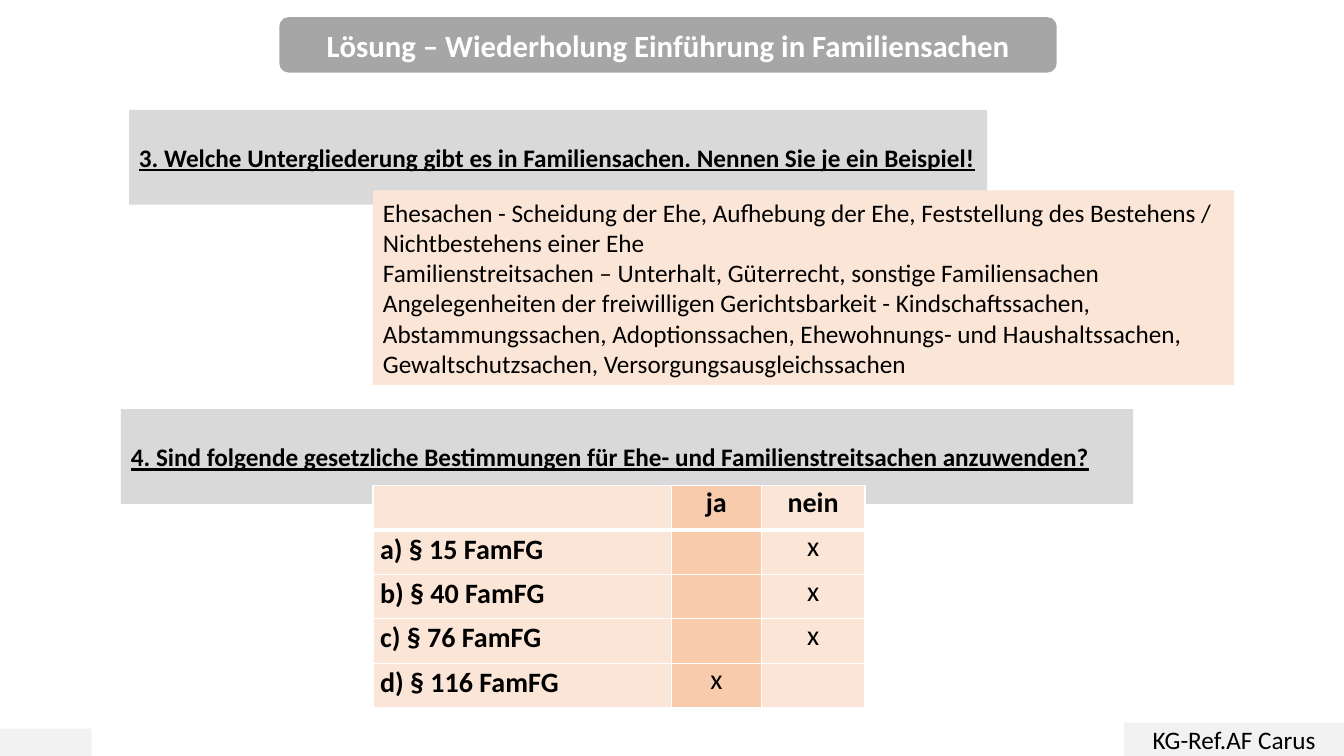
from lxml import etree
from pptx import Presentation, util as u
from pptx.dml.color import RGBColor
from pptx.enum import shapes as sh, text as tx
from pptx.oxml import ns


def color(hex_value):
    return RGBColor.from_string(hex_value)


def write(frame, lines, align, ink="000000", spacing=None, **font_format):
    for index, line in enumerate(lines):
        paragraph = frame.paragraphs[0] if index == 0 else frame.add_paragraph()
        paragraph.alignment = align
        paragraph.line_spacing = spacing
        run = paragraph.add_run()
        run.text = line
        run.font.name = "Calibri"
        run.font.color.rgb = color(ink)
        for attribute, value in font_format.items():
            setattr(run.font, attribute, value)


LEFT, CENTER = tx.PP_ALIGN.LEFT, tx.PP_ALIGN.CENTER
RECT, ROUNDED = sh.MSO_SHAPE.RECTANGLE, sh.MSO_SHAPE.ROUNDED_RECTANGLE
PEACH, DARK_PEACH, GREY, PALE_GREY = "FBE5D6", "F8CBAD", "D9D9D9", "F2F2F2"

title = {"size": u.Pt(22), "bold": True, "ink": "FFFFFF"}
body = {"size": u.Pt(18)}
question = {"size": u.Pt(18), "bold": True, "underline": True}

deck = Presentation()
deck.slide_width, deck.slide_height = u.Inches(13.33), u.Inches(7.5)
slide = deck.slides.add_slide(deck.slide_layouts[6])

panels = [
    (ROUNDED, (2.77, 0.17, 7.71, 0.55), "A6A6A6", CENTER, title,
     ["Lösung – Wiederholung Einführung in Familiensachen"]),
    (RECT, (0, 7.23, 0.91, 0.27), PALE_GREY, CENTER, body, []),
    (RECT, (11.15, 7.17, 2.18, 0.33), PALE_GREY, CENTER, body, ["KG-Ref.AF Carus"]),
    (RECT, (1.28, 1.09, 8.51, 0.94), GREY, LEFT, question,
     ["3. Welche Untergliederung gibt es in Familiensachen. Nennen Sie je ein Beispiel!"]),
    (RECT, (3.7, 1.89, 8.54, 1.93), PEACH, LEFT, body,
     ["Ehesachen - Scheidung der Ehe, Aufhebung der Ehe, Feststellung des Bestehens / "
      "Nichtbestehens einer Ehe",
      "Familienstreitsachen – Unterhalt, Güterrecht, sonstige Familiensachen",
      "Angelegenheiten der freiwilligen Gerichtsbarkeit - Kindschaftssachen, "
      "Abstammungssachen, Adoptionssachen, Ehewohnungs- und Haushaltssachen, "
      "Gewaltschutzsachen, Versorgungsausgleichssachen"]),
    (RECT, (1.2, 4.06, 10.04, 0.94), GREY, LEFT, question,
     ["4. Sind folgende gesetzliche Bestimmungen für Ehe- und Familienstreitsachen anzuwenden?"]),
]
for outline, place, fill, align, font_format, lines in panels:
    panel = slide.shapes.add_shape(outline, *map(u.Inches, place))
    panel.shadow.inherit = False
    panel.fill.solid()
    panel.fill.fore_color.rgb = color(fill)
    panel.line.fill.background()
    panel.text_frame.word_wrap = True
    panel.text_frame.vertical_anchor = tx.MSO_ANCHOR.MIDDLE
    write(panel.text_frame, lines, align, **font_format)

answers = [
    ("", "ja", "nein"),
    ("a) § 15 FamFG", "", "x"),
    ("b) § 40 FamFG", "", "x"),
    ("c) § 76 FamFG", "", "x"),
    ("d) § 116 FamFG", "x", ""),
]
column_widths = [2.96, 0.89, 1.03]
cell_margins = {"margin_left": 0.07, "margin_right": 0.07, "margin_top": 0, "margin_bottom": 0}
answer_table = slide.shapes.add_table(
    len(answers), len(column_widths), *map(u.Inches, (3.7, 4.82, 4.88, 2.21))).table
for column, width in zip(answer_table.columns, column_widths):
    column.width = u.Inches(width)

for row_index, answer in enumerate(answers):
    answer_table.rows[row_index].height = u.Inches(0.44)
    for column_index, entry in enumerate(answer):
        cell = answer_table.cell(row_index, column_index)
        for margin, value in cell_margins.items():
            setattr(cell, margin, u.Inches(value))
        properties = cell._tc.get_or_add_tcPr()
        for side in "LRTB":
            below_header = (row_index, side) in ((0, "B"), (1, "T"))
            border = etree.SubElement(properties, ns.qn(f"a:ln{side}"),
                                      w=str(u.Pt(3 if below_header else 1)))
            border_fill = etree.SubElement(border, ns.qn("a:solidFill"))
            etree.SubElement(border_fill, ns.qn("a:srgbClr"), val="FFFFFF")
        cell.fill.solid()
        cell.fill.fore_color.rgb = color(DARK_PEACH if column_index == 1 else PEACH)
        if entry:
            label = column_index == 0
            write(cell.text_frame, [entry], LEFT if label else CENTER,
                  spacing=1.07 if label else None, size=u.Pt(20), bold=entry != "x")

deck.save("out.pptx")
